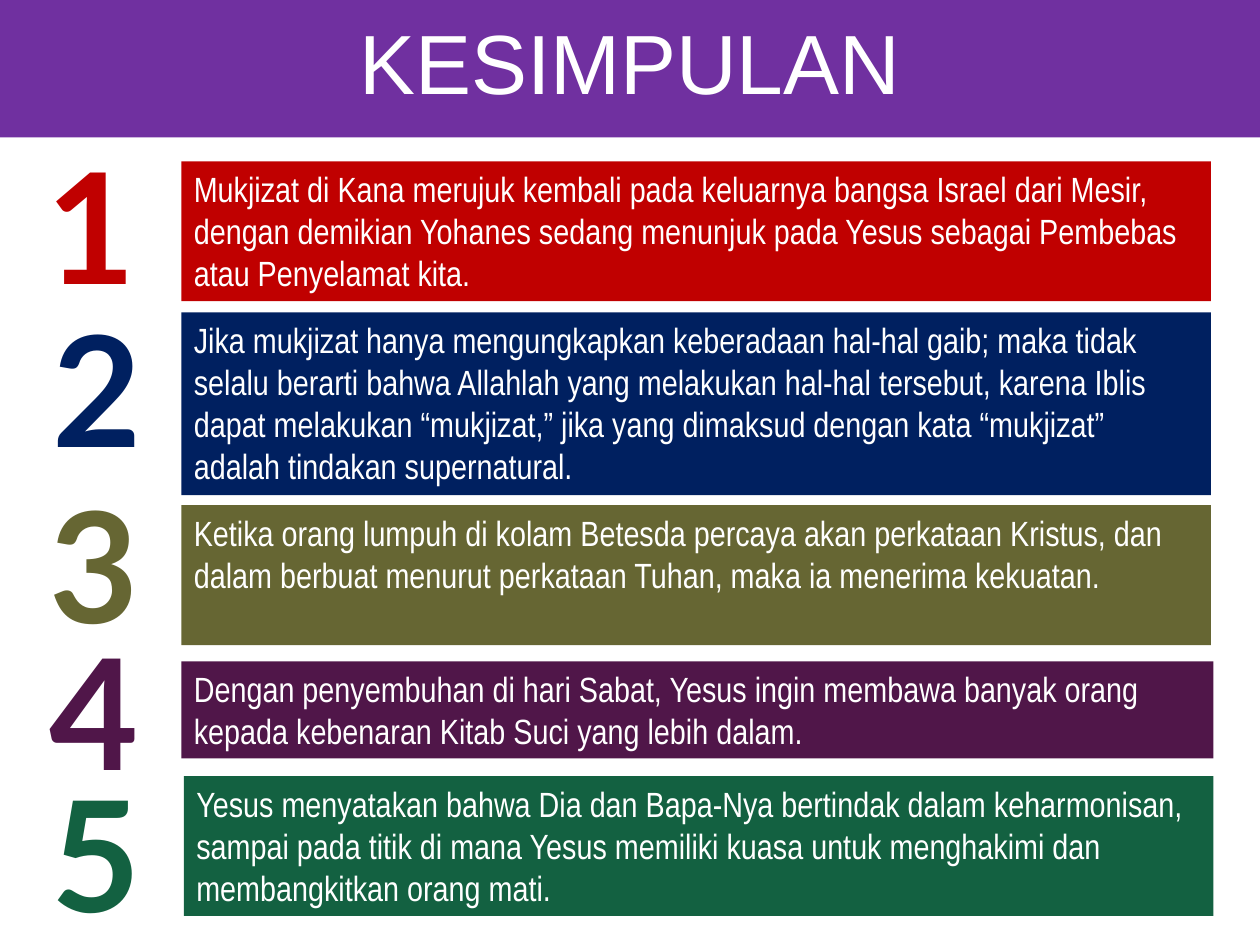
from dataclasses import dataclass

from lxml.etree import SubElement
from pptx import Presentation
from pptx.dml.color import RGBColor
from pptx.enum.shapes import MSO_SHAPE
from pptx.enum.text import MSO_ANCHOR, MSO_AUTO_SIZE, PP_ALIGN
from pptx.oxml.ns import qn
from pptx.util import Inches, Pt


@dataclass(frozen=True)
class Theme:
    white: str = "FFFFFF"
    banner: str = "7030A0"
    points: tuple = ("C00000", "002060", "666633", "501649", "136141")
    title_font: str = "Arial"
    body_font: str = "Arial Narrow"
    number_font: str = "Lato"
    title_size: float = 48
    body_size: float = 20
    number_size: float = 88
    outline_width: float = 1.06


POINTS = [
    ("Mukjizat di Kana merujuk kembali pada keluarnya bangsa Israel dari Mesir, "
     "dengan demikian Yohanes sedang menunjuk pada Yesus sebagai Pembebas "
     "atau Penyelamat kita.",
     (1.44, 1.28, 8.17, 1.11), (0.29, 0.99)),
    ("Jika mukjizat hanya mengungkapkan keberadaan hal-hal gaib; maka tidak "
     "selalu berarti bahwa Allahlah yang melakukan hal-hal tersebut, karena Iblis "
     "dapat melakukan “mukjizat,” jika yang dimaksud dengan kata “mukjizat” "
     "adalah tindakan supernatural.",
     (1.44, 2.48, 8.17, 1.45), (0.34, 2.28)),
    ("Ketika orang lumpuh di kolam Betesda percaya akan perkataan Kristus, dan "
     "dalam berbuat menurut perkataan Tuhan, maka ia menerima kekuatan.",
     (1.44, 4.01, 8.17, 1.11), (0.32, 3.68)),
    ("Dengan penyembuhan di hari Sabat, Yesus ingin membawa banyak orang "
     "kepada kebenaran Kitab Suci yang lebih dalam.",
     (1.44, 5.25, 8.19, 0.77), (0.32, 4.84)),
    ("Yesus menyatakan bahwa Dia dan Bapa-Nya bertindak dalam keharmonisan, "
     "sampai pada titik di mana Yesus memiliki kuasa untuk menghakimi dan "
     "membangkitkan orang mati.",
     (1.46, 6.16, 8.17, 1.11), (0.33, 5.97)),
]
NUMBER_SIZE = (0.86, 1.58)


def set_attributes(target, values):
    for name, value in values.items():
        setattr(target, name, value)


class SlideBuilder:
    def __init__(self, slide, theme):
        self.slide = slide
        self.theme = theme

    def fill(self, shape, color):
        shape.fill.solid()
        shape.fill.fore_color.rgb = RGBColor.from_string(color)

    def add_text(self, shape, text, color, font, frame, paragraph_format):
        set_attributes(shape.text_frame, {"auto_size": MSO_AUTO_SIZE.NONE, **frame})
        paragraph = shape.text_frame.paragraphs[0]
        set_attributes(paragraph, paragraph_format)
        run = paragraph.add_run()
        run.text = text
        set_attributes(run.font, font)
        run.font.color.rgb = RGBColor.from_string(color)
        return run

    def title(self, text, box):
        shape = self.slide.shapes.title
        left, top, width, height = map(Inches, box)
        set_attributes(shape, {"left": left, "top": top, "width": width, "height": height})
        self.fill(shape, self.theme.banner)
        self.add_text(
            shape, text, self.theme.white,
            {"name": self.theme.title_font, "size": Pt(self.theme.title_size)},
            {"word_wrap": True, "vertical_anchor": MSO_ANCHOR.MIDDLE},
            {"alignment": PP_ALIGN.CENTER, "line_spacing": 0.9},
        )

    def panel(self, text, box, color):
        shape = self.slide.shapes.add_shape(MSO_SHAPE.RECTANGLE, *map(Inches, box))
        shape.shadow.inherit = False
        self.fill(shape, color)
        shape.line.fill.background()
        self.add_text(
            shape, text, self.theme.white,
            {"name": self.theme.body_font, "size": Pt(self.theme.body_size)},
            {"word_wrap": True, "vertical_anchor": MSO_ANCHOR.TOP},
            {"alignment": PP_ALIGN.LEFT},
        )

    def number(self, value, position, color):
        shape = self.slide.shapes.add_textbox(*map(Inches, position + NUMBER_SIZE))
        run = self.add_text(
            shape, str(value), color,
            {"name": self.theme.number_font, "size": Pt(self.theme.number_size), "bold": True},
            {"word_wrap": False, "vertical_anchor": MSO_ANCHOR.TOP},
            {"alignment": PP_ALIGN.CENTER},
        )
        self.outline(run)

    def outline(self, run):
        properties = run._r.get_or_add_rPr()
        line = SubElement(properties, qn("a:ln"), w=str(Pt(self.theme.outline_width)))
        solid = SubElement(line, qn("a:solidFill"))
        SubElement(solid, qn("a:srgbClr"), val=self.theme.white)
        properties.insert(0, line)


def main():
    presentation = Presentation()
    set_attributes(presentation, {"slide_width": Inches(10), "slide_height": Inches(7.5)})
    slide = presentation.slides.add_slide(presentation.slide_layouts[5])
    theme = Theme()
    builder = SlideBuilder(slide, theme)
    builder.title("KESIMPULAN", (0, -0.02, 10, 1.11))
    for (text, box, _), color in zip(POINTS, theme.points):
        builder.panel(text, box, color)
    for value, ((_, _, position), color) in enumerate(zip(POINTS, theme.points), 1):
        builder.number(value, position, color)
    presentation.save("out.pptx")


if __name__ == "__main__":
    main()
